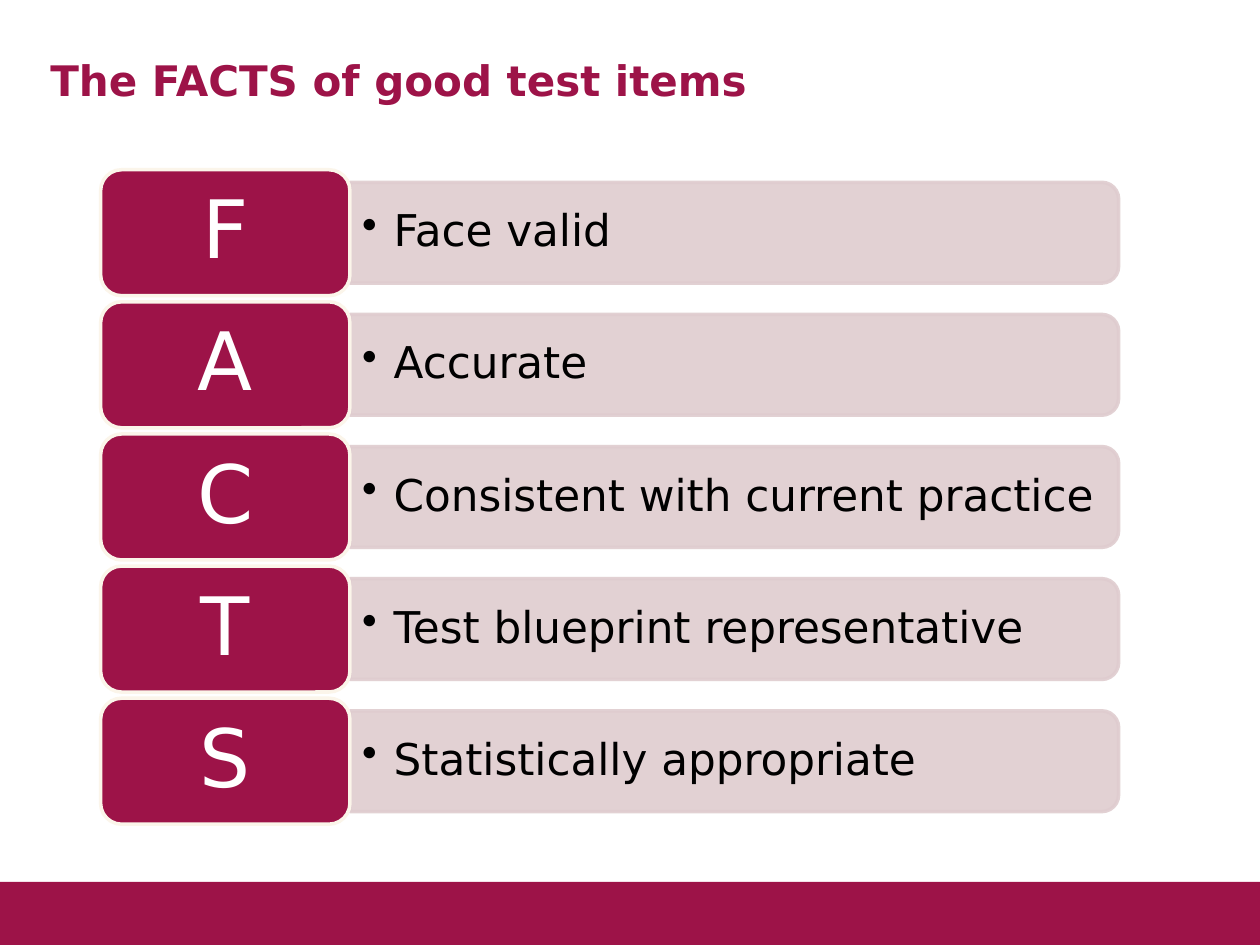
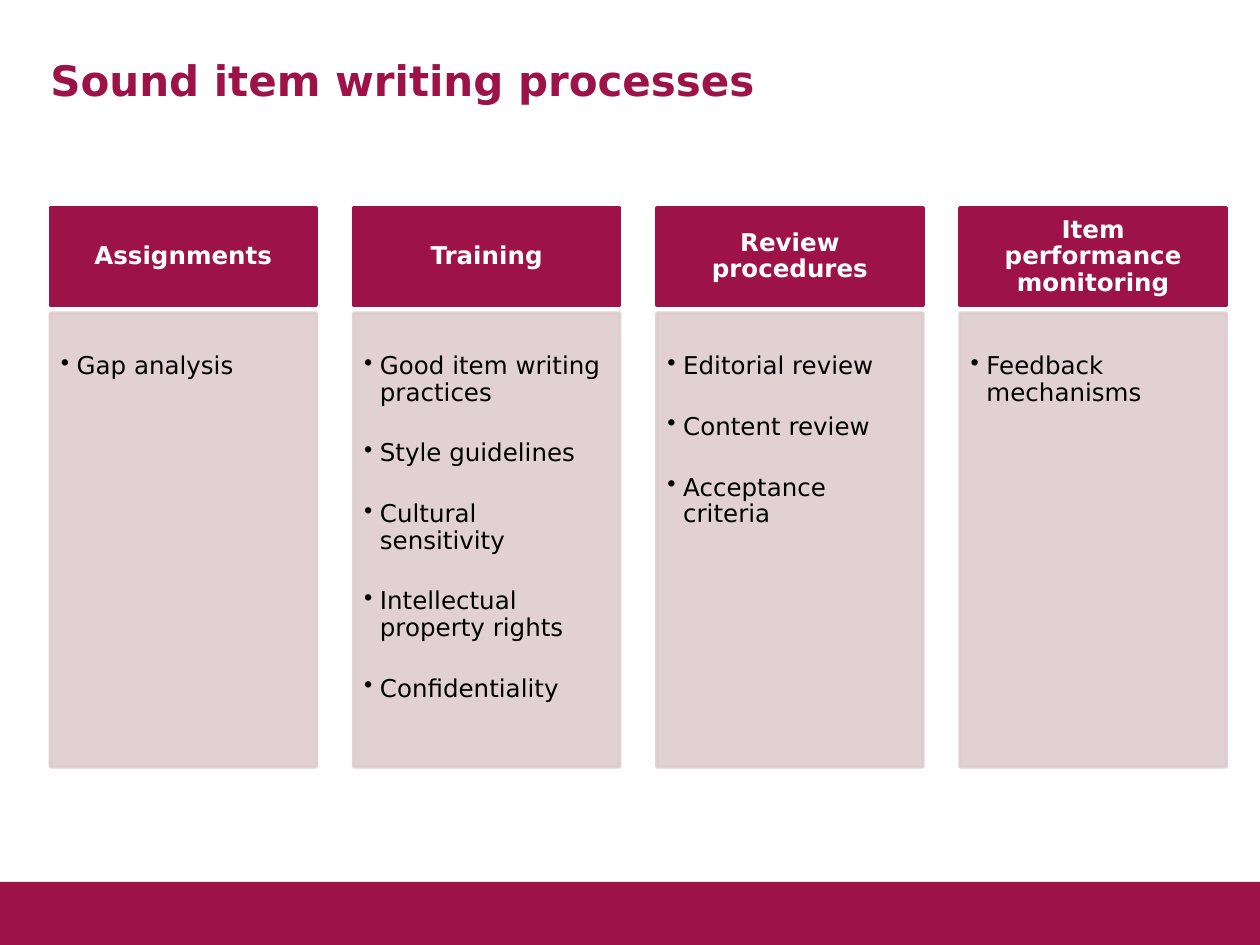
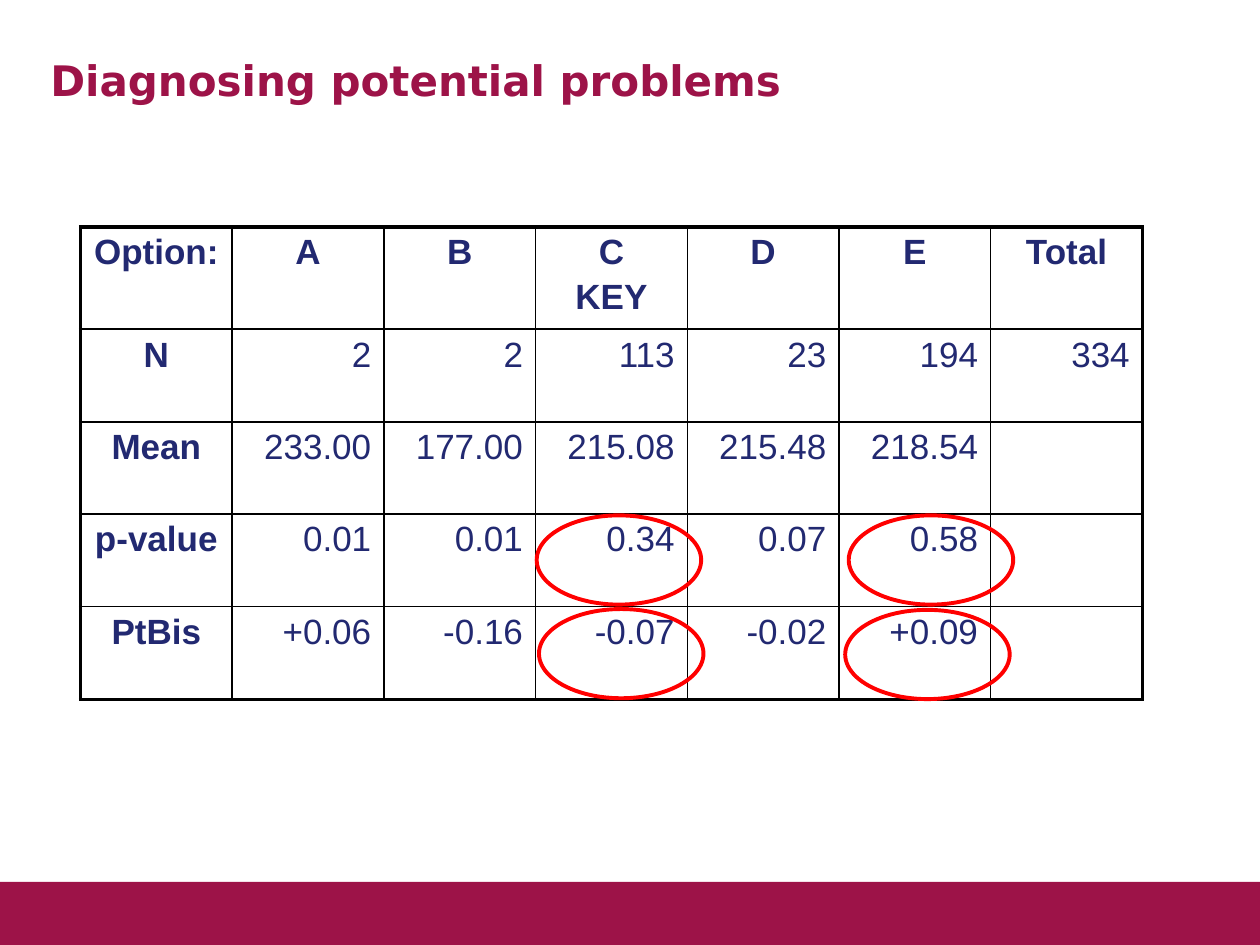
from lxml import etree
from pptx import Presentation
from pptx.dml.color import RGBColor
from pptx.enum import shapes, text
from pptx.oxml import ns
from pptx.util import Pt

WINE = RGBColor(0x9D, 0x13, 0x48)
ROSE = RGBColor(0xDF, 0xCC, 0xCF)
CREAM = RGBColor(0xFB, 0xF5, 0xEA)
NAVY = RGBColor(0x22, 0x29, 0x71)
RED = RGBColor(0xFF, 0x00, 0x00)
BLACK = RGBColor(0, 0, 0)
WHITE = RGBColor(0xFF, 0xFF, 0xFF)

SANS = "DejaVu Sans"
ARIAL = "Arial"
WIDE, HIGH = 720, 540
THIN, THICK = 1, 2.25

KIND = shapes.MSO_SHAPE
LEFT, MID, RIGHT = text.PP_ALIGN.LEFT, text.PP_ALIGN.CENTER, text.PP_ALIGN.RIGHT
TOP, CENTER = text.MSO_ANCHOR.TOP, text.MSO_ANCHOR.MIDDLE

FACTS = ["Face valid", "Accurate", "Consistent with current practice",
         "Test blueprint representative", "Statistically appropriate"]
STEPS = {
    "Assignments": ["Gap analysis"],
    "Training": ["Good item writing practices", "Style guidelines",
                 "Cultural sensitivity", "Intellectual property rights",
                 "Confidentiality"],
    "Review procedures": ["Editorial review", "Content review",
                          "Acceptance criteria"],
    "Item performance monitoring": ["Feedback mechanisms"],
}
STATS = [
    ["Option:", "A", "B", "C\nKEY", "D", "E", "Total"],
    ["N", "2", "2", "113", "23", "194", "334"],
    ["Mean", "233.00", "177.00", "215.08", "215.48", "218.54", ""],
    ["p-value", "0.01", "0.01", "0.34", "0.07", "0.58", ""],
    ["PtBis", "+0.06", "-0.16", "-0.07", "-0.02", "+0.09", ""],
]


def sub(node, tag, **attrs):
    return etree.SubElement(node, ns.qn(tag), **attrs)


class Deck:
    def __init__(self):
        self.prs = Presentation()
        self.prs.slide_width, self.prs.slide_height = Pt(WIDE), Pt(HIGH)
        self.slide = None

    def page(self, title):
        """Start a slide with the shared band and title."""
        self.slide = self.prs.slides.add_slide(self.prs.slide_layouts[6])
        self.shape(KIND.RECTANGLE, (0, 504, WIDE, 36), WINE)
        self.label((28.8, 31, 648, 70), [title], 24, WINE, bold=True,
                   pad=(0, 0, 7, 4))

    def shape(self, kind, box, fill=None, line=None, weight=2, clear=False):
        """Draw a preset shape; clear makes it one tenth transparent."""
        item = self.slide.shapes.add_shape(kind, *map(Pt, box))
        item.shadow.inherit = False
        if fill is None:
            item.fill.background()
        else:
            item.fill.solid()
            item.fill.fore_color.rgb = fill
        if line is None:
            item.line.fill.background()
        else:
            item.line.color.rgb = line
            item.line.width = Pt(weight)
        if clear:
            for color in item._element.spPr.iter(ns.qn("a:srgbClr")):
                sub(color, "a:alpha", val="90000")
        return item

    def label(self, box, lines, size, color, **style):
        item = self.slide.shapes.add_textbox(*map(Pt, box))
        self.letter(item.text_frame, lines, size, color, **style)

    def letter(self, frame, lines, size, color, font=SANS, bold=False,
               align=LEFT, anchor=TOP, pad=(7, 4, 7, 4), space=None, gap=0,
               bullet=0):
        """Fill a frame; bullet is the hanging indent, gap parts paragraphs."""
        frame.word_wrap = True
        frame.vertical_anchor = anchor
        (frame.margin_left, frame.margin_top,
         frame.margin_right, frame.margin_bottom) = map(Pt, pad)
        frame.text = "\n".join(lines)
        for row, para in enumerate(frame.paragraphs):
            para.alignment = align
            if space:
                para.line_spacing = space
            if row and gap:
                para.space_before = Pt(gap)
            if bullet:
                props = para._p.get_or_add_pPr()
                props.set("marL", str(Pt(bullet)))
                props.set("indent", str(-Pt(bullet)))
                sub(props, "a:buChar", char="•")
            self.style(para.font, size, color, font, bold)

    def style(self, face, size, color, font, bold):
        face.name, face.size, face.bold = font, Pt(size), bold
        face.color.rgb = color

    def table(self, left, top, width, highs, rows):
        count = len(rows[0])
        grid = self.slide.shapes.add_table(
            len(rows), count, Pt(left), Pt(top),
            Pt(width * count), Pt(sum(highs))).table
        grid.first_row = grid.horz_banding = False
        for col in grid.columns:
            col.width = Pt(width)
        for r, (high, row) in enumerate(zip(highs, rows)):
            grid.rows[r].height = Pt(high)
            for c, value in enumerate(row):
                head = r == 0 or c == 0
                cell = grid.cell(r, c)
                self.edges(cell, L=c == 0, R=c == count - 1,
                           T=r == 0, B=r == len(rows) - 1)
                cell.fill.background()
                cell.text = value
                for n, para in enumerate(cell.text_frame.paragraphs):
                    para.alignment = MID if head else RIGHT
                    if n:
                        para.space_before = Pt(3.3)
                    self.style(para.font, 20, NAVY, ARIAL, head)

    def edges(self, cell, **outer):
        """Rule the four sides of a cell, thick on the outer ones."""
        props = cell._tc.get_or_add_tcPr()
        for side, thick in outer.items():
            line = sub(props, f"a:ln{side}", w=str(Pt(THICK if thick else THIN)))
            sub(sub(line, "a:solidFill"), "a:srgbClr", val=str(BLACK))


def facts(deck):
    deck.page("The FACTS of good test items")
    left, width, high, pitch = 57.5, 142.5, 72, 75.5
    start, length, thick = left + width, 439.2, 57.6
    for row, fact in enumerate(FACTS):
        top = 97 + row * pitch
        mid = top + high / 2
        bar = deck.shape(KIND.ROUND_2_SAME_RECTANGLE,
                         (start + (length - thick) / 2, mid - length / 2,
                          thick, length), ROSE, ROSE, clear=True)
        bar.rotation = 90
        deck.label((start, mid - 26, 436.3, 52), [fact], 25, BLACK,
                   anchor=CENTER, space=0.9, bullet=18)
        tile = deck.shape(KIND.ROUNDED_RECTANGLE, (left, top, width, high),
                          WINE, CREAM)
        deck.letter(tile.text_frame, [fact[0]], 46, WHITE, align=MID,
                    anchor=CENTER, space=0.9)


def steps(deck):
    deck.page("Sound item writing processes")
    width, pitch = 152, 173.3
    for col, (name, points) in enumerate(STEPS.items()):
        left = 28.8 + col * pitch
        head = deck.shape(KIND.RECTANGLE, (left, 119, width, 55.4), WINE, WINE)
        deck.letter(head.text_frame, [name], 14, WHITE, bold=True, align=MID,
                    anchor=CENTER, pad=(8, 4, 8, 4), space=0.9)
        panel = deck.shape(KIND.RECTANGLE, (left, 179, width, 259.2),
                           ROSE, ROSE, clear=True)
        deck.letter(panel.text_frame, points, 14, BLACK, pad=(6, 23, 8, 8),
                    space=0.9, gap=19.6, bullet=9)


def stats(deck):
    deck.page("Diagnosing potential problems")
    deck.table(46, 129.6, 86.7, [56, 53, 52.5, 53, 53], STATS)
    for left, top in [(483, 348.5), (485, 294.5), (308, 348), (306.7, 294.5)]:
        deck.shape(KIND.OVAL, (left, top, 94, 51), line=RED, weight=THICK)


def main():
    deck = Deck()
    facts(deck)
    steps(deck)
    stats(deck)
    deck.prs.save("out.pptx")


if __name__ == "__main__":
    main()
